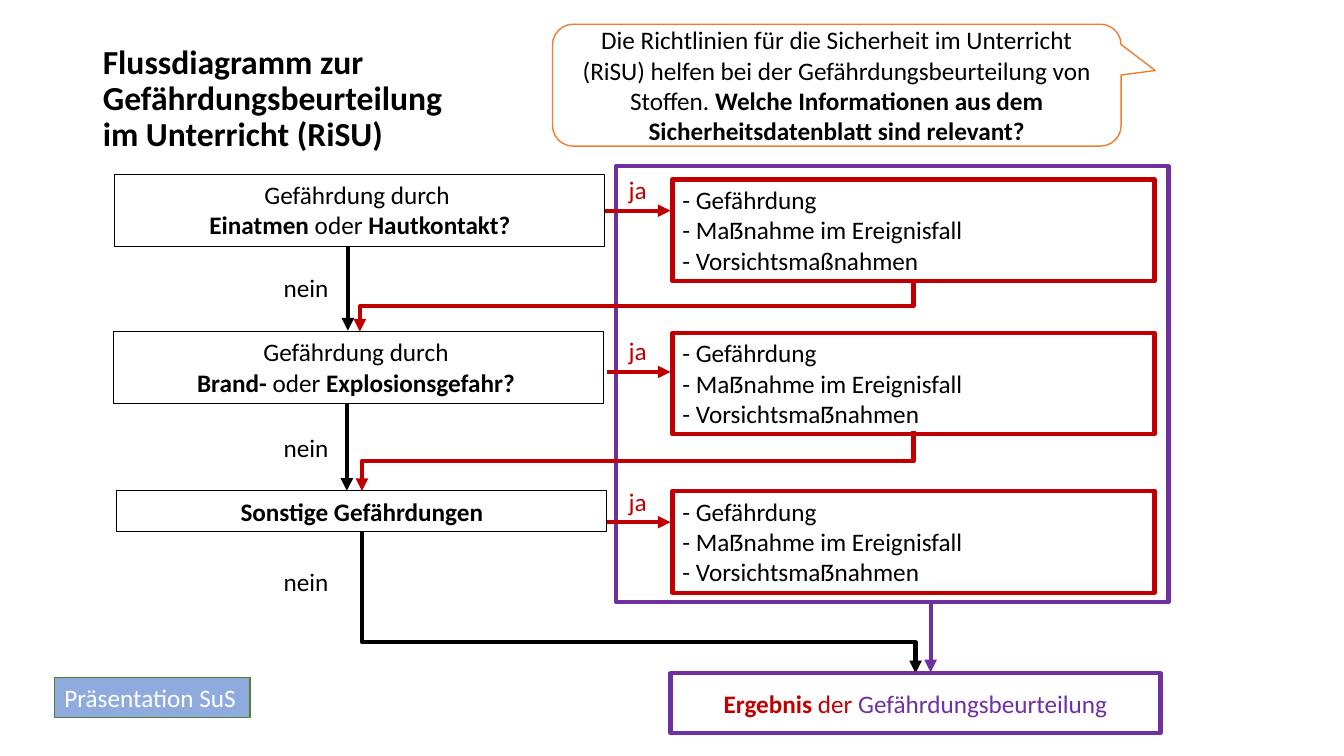
import pptx
import pptx.util
import pptx.dml.color
import pptx.enum.shapes
import pptx.enum.text
import pptx.oxml.ns
from dataclasses import dataclass
from lxml import etree
from pptx.util import Inches

SHAPE = pptx.enum.shapes.MSO_SHAPE
CONNECTOR = pptx.enum.shapes.MSO_CONNECTOR
ALIGN = pptx.enum.text.PP_ALIGN
ANCHOR = pptx.enum.text.MSO_ANCHOR
qn = pptx.oxml.ns.qn


@dataclass(frozen=True)
class Theme:
    font: str = "Calibri"
    title_size: int = 24
    text_size: int = 18
    black: str = "000000"
    white: str = "FFFFFF"
    red: str = "C00000"
    purple: str = "7030A0"
    orange: str = "ED7D31"
    blue: str = "8FAADC"
    green: str = "538035"
    thin: float = 0.75
    medium: float = 1
    thick: float = 3


def rgb(color):
    return pptx.dml.color.RGBColor.from_string(color)


class FlowPage:
    def __init__(self, page, theme):
        self.page = page
        self.theme = theme

    def fill_text(self, frame, paragraphs, align=ALIGN.LEFT, size=None, spacing=None):
        """Fill a text frame; each paragraph is a list of (text, color, bold)."""
        frame.word_wrap = True
        for index, spans in enumerate(paragraphs):
            para = frame.add_paragraph() if index else frame.paragraphs[0]
            para.alignment = align
            para.line_spacing = spacing
            for text, color, bold in spans:
                for number, piece in enumerate(text.split("\n")):
                    if number:
                        para.add_line_break()
                    if piece:
                        span = para.add_run()
                        span.text = piece
                        span.font.name = self.theme.font
                        span.font.size = pptx.util.Pt(size or self.theme.text_size)
                        span.font.bold = bold
                        span.font.color.rgb = rgb(color)

    def title(self, area, lines):
        title = self.page.shapes.title
        title.left, title.top, title.width, title.height = map(Inches, area)
        title.text_frame.vertical_anchor = ANCHOR.TOP
        self.fill_text(title.text_frame, [[(line, self.theme.black, True)] for line in lines],
                       size=self.theme.title_size, spacing=0.9)

    def box(self, area, line, weight, paragraphs=(), fill=None, align=ALIGN.CENTER,
            anchor=ANCHOR.TOP, kind=SHAPE.RECTANGLE):
        box = self.page.shapes.add_shape(kind, *map(Inches, area))
        box.shadow.inherit = False
        if fill:
            box.fill.solid()
            box.fill.fore_color.rgb = rgb(fill)
        else:
            box.fill.background()
        box.line.color.rgb = rgb(line)
        box.line.width = pptx.util.Pt(weight)
        box.text_frame.vertical_anchor = anchor
        self.fill_text(box.text_frame, paragraphs, align)
        return box

    def label(self, left, top, text, color):
        frame = self.page.shapes.add_textbox(
            *map(Inches, (left, top, 0.53, 0.3))).text_frame
        frame.margin_left = frame.margin_right = 0
        frame.margin_top = frame.margin_bottom = 0
        self.fill_text(frame, [[(text, color, False)]], ALIGN.CENTER)

    def arrow(self, start, end, color, kind=CONNECTOR.STRAIGHT):
        arrow = self.page.shapes.add_connector(kind, *map(Inches, (*start, *end)))
        arrow.line.color.rgb = rgb(color)
        arrow.line.width = pptx.util.Pt(self.theme.thick)
        properties = arrow._element.spPr
        etree.SubElement(properties.find(qn("a:ln")), qn("a:tailEnd"), type="triangle")
        etree.SubElement(properties, qn("a:effectLst"))
        return arrow

    def elbow(self, start, end, color, bend=0.5):
        """Arrow going down, sideways and down: a turned elbow about its centre."""
        center_x, center_y = (start[0] + end[0]) / 2, (start[1] + end[1]) / 2
        half_run, half_drop = abs(end[0] - start[0]) / 2, (end[1] - start[1]) / 2
        rightward = end[0] > start[0]
        side = half_drop if rightward else -half_drop
        arrow = self.arrow((center_x + side, center_y - half_run),
                           (center_x - side, center_y + half_run),
                           color, CONNECTOR.ELBOW)
        properties = arrow._element.spPr
        properties.find(qn("a:xfrm")).set("rot", str((270 if rightward else 90) * 60000))
        guides = properties.find(qn("a:prstGeom")).find(qn("a:avLst"))
        etree.SubElement(guides, qn("a:gd"), name="adj1", fmla=f"val {round(bend * 100000)}")


def main():
    theme = Theme()
    black, red, purple = theme.black, theme.red, theme.purple
    deck = pptx.Presentation()
    deck.slide_width, deck.slide_height = Inches(13.33), Inches(7.5)
    flow = FlowPage(deck.slides.add_slide(deck.slide_layouts[5]), theme)

    flow.title((0.92, 0.4, 5.68, 1.45),
               ["Flussdiagramm zur Gefährdungsbeurteilung", "im Unterricht (RiSU)"])
    flow.box((6.11, 1.65, 5.48, 4.32), purple, theme.thick)

    # question area, question text, measures top, last measure, "ja" top, "ja" arrow height
    steps = [
        ((1.14, 1.73, 4.86, 0.72),
         [("Gefährdung durch \n", black, False), ("Einatmen", black, True),
          (" oder ", black, False), ("Hautkontakt?", black, True)],
         1.78, "- Vorsichtsmaßnahmen", 1.73, 2.09),
        ((1.13, 3.29, 4.86, 0.71),
         [("Gefährdung durch \n", black, False), ("Brand-", black, True),
          (" oder ", black, False), ("Explosionsgefahr? ", black, True)],
         3.3, "- Vorsichtsmaẞnahmen", 3.33, 3.69),
        ((1.16, 4.87, 4.86, 0.4), [("Sonstige Gefährdungen", black, True)],
         4.87, "- Vorsichtsmaẞnahmen", 4.82, 5.18),
    ]
    questions = []
    for area, question, top, last, yes_top, yes_y in steps:
        questions.append(flow.box(area, black, theme.thin, [question]))
        flow.box((6.67, top, 4.78, 1.01), red, theme.thick,
                 [[("- Gefährdung\n- Maẞnahme im Ereignisfall", black, False)],
                  [(last, black, False)]], align=ALIGN.LEFT)
        flow.label(6.06, yes_top, "ja", red)
        yes_arrow = flow.arrow((6.02, yes_y), (6.65, yes_y), red)
        if len(questions) == 1:
            yes_arrow.begin_connect(questions[0], 3)

    for no_top in (2.7, 4.29, 5.62):
        flow.label(2.77, no_top, "nein", black)
    flow.arrow((3.45, 2.44), (3.45, 3.28), black)
    flow.arrow((3.44, 4), (3.44, 4.87), black)
    flow.elbow((9.06, 2.78), (3.57, 3.29), red)
    flow.elbow((9.06, 4.28), (3.59, 4.87), red)
    flow.elbow((3.59, 5.28), (9.08, 6.68), black, bend=0.78)
    flow.arrow((9.23, 5.97), (9.23, 6.67), purple)

    flow.box((6.65, 6.68, 4.86, 0.59), purple, theme.thick,
             [[("Ergebnis ", red, True), ("der ", red, False),
               ("Gefährdungsbeurteilung", purple, False)]], anchor=ANCHOR.MIDDLE)
    flow.box((0.54, 6.72, 1.94, 0.4), theme.green, theme.medium,
             [[("Präsentation SuS", theme.white, False)]],
             fill=theme.blue, align=ALIGN.LEFT)
    callout = flow.box(
        (5.48, 0.24, 5.64, 1.21), theme.orange, theme.medium,
        [[("Die Richtlinien für die Sicherheit im Unterricht (RiSU) helfen bei der "
           "Gefährdungsbeurteilung von Stoffen. ", black, False),
          ("Welche Informationen aus dem Sicherheitsdatenblatt sind relevant?", black, True)]],
        fill=theme.white, anchor=ANCHOR.MIDDLE, kind=SHAPE.ROUNDED_RECTANGULAR_CALLOUT)
    for index, value in enumerate((0.56, -0.12, 0.17)):
        callout.adjustments[index] = value

    deck.save("out.pptx")


if __name__ == "__main__":
    main()
